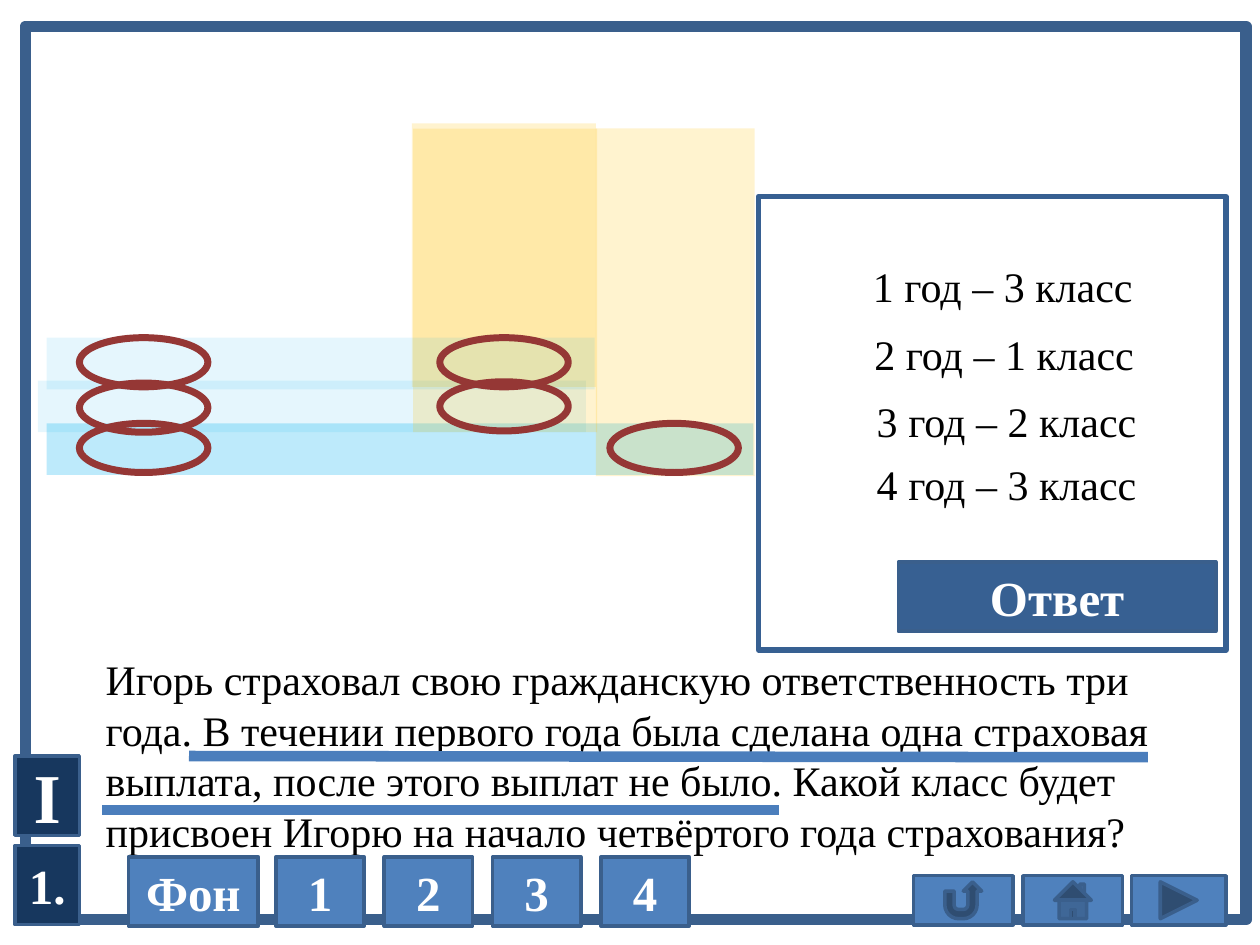
from lxml.etree import SubElement
from pptx import Presentation
from pptx.dml.color import RGBColor
from pptx.enum.shapes import MSO_CONNECTOR, MSO_SHAPE
from pptx.enum.text import MSO_ANCHOR, MSO_AUTO_SIZE, PP_ALIGN
from pptx.oxml.ns import qn
from pptx.util import Inches, Pt

COLORS = {
    "white": "FFFFFF", "black": "000000", "border": "3A5F8C", "navy": "17375E",
    "button": "4F81BD", "answer": "376092", "underline": "4B7EBC",
    "ring": "953735", "row": "00B0F0", "column": "FFC000",
}
FONT = "Times New Roman"

deck = Presentation()
deck.slide_width, deck.slide_height = Inches(10), Inches(7.5)
page = deck.slides.add_slide(deck.slide_layouts[6])


def add_box(kind, place, fill=None, line=None, width=2, opacity=100):
    """Add a preset shape with a plain fill and outline."""
    box = page.shapes.add_shape(kind, *[Inches(value) for value in place])
    box.shadow.inherit = False
    if fill:
        box.fill.solid()
        box.fill.fore_color.rgb = RGBColor.from_string(COLORS[fill])
        if opacity < 100:
            color = box.fill._xPr.find(qn("a:solidFill"))[0]
            SubElement(color, qn("a:alpha"), val=str(opacity * 1000))
    else:
        box.fill.background()
    if line:
        box.line.color.rgb = RGBColor.from_string(COLORS[line])
        box.line.width = Pt(width)
    else:
        box.line.fill.background()
    return box


def write(box, text, size=24, color="black", bold=False, align=PP_ALIGN.LEFT):
    """Put one paragraph of text into a box."""
    para = box.text_frame.paragraphs[0]
    para.text = text
    para.alignment = align
    para.font.name = FONT
    para.font.size = Pt(size)
    para.font.bold = bold
    para.font.color.rgb = RGBColor.from_string(COLORS[color])


# Page frame
add_box(MSO_SHAPE.RECTANGLE, (0.2, 0.21, 9.69, 7.09), "white", "border", 6.5)
add_box(MSO_SHAPE.RECTANGLE, (0.28, 0.29, 9.53, 6.9), "white")

# Translucent bands marking table rows and columns
bands = [
    ((0.37, 3.36, 5.61, 0.41), "row", 26),
    ((0.3, 3.02, 4.35, 0.41), "row", 10),
    ((3.27, 0.98, 1.46, 2.09), "column", 19),
    ((3.28, 1.02, 1.46, 2.41), "column", 19),
    ((0.37, 2.68, 4.35, 0.41), "row", 10),
    ((4.73, 1.02, 1.26, 2.76), "column", 19),
]
for place, color, opacity in bands:
    add_box(MSO_SHAPE.RECTANGLE, place, color, opacity=opacity)

# Rings around the chosen cells
for left, top in [(4.84, 3.36), (0.63, 2.68), (3.49, 2.68),
                  (0.63, 3.04), (3.49, 3.03), (0.63, 3.36)]:
    add_box(MSO_SHAPE.OVAL, (left, top, 1.02, 0.39), line="ring", width=4)

# Problem text
problem = add_box(MSO_SHAPE.RECTANGLE, (0.74, 5.14, 8.99, 1.72), "white")
problem.text_frame.word_wrap = True
problem.text_frame.vertical_anchor = MSO_ANCHOR.TOP
write(problem, "Игорь страховал свою гражданскую ответственность три года. "
      "В течении первого года была сделана одна страховая выплата, "
      "после этого выплат не было. Какой класс будет присвоен Игорю "
      "на начало четвёртого года страхования?")

# Underlines beneath the key sentence
for start_x, start_y, end_x, end_y in [(1.5, 6, 9.11, 6.01), (0.81, 6.43, 6.18, 6.43)]:
    underline = page.shapes.add_connector(
        MSO_CONNECTOR.STRAIGHT, Inches(start_x), Inches(start_y), Inches(end_x), Inches(end_y))
    underline.line.color.rgb = RGBColor.from_string(COLORS["underline"])
    underline.line.width = Pt(6)
    SubElement(underline._element.spPr, qn("a:effectLst"))

# Answer panel
add_box(MSO_SHAPE.RECTANGLE, (6.02, 1.56, 3.71, 3.6), "white", "answer", 3)
answers = [(6.83, 2.02, 3), (6.84, 2.56, 1), (6.86, 3.09, 2), (6.86, 3.59, 3)]
for year, (left, top, grade) in enumerate(answers, 1):
    answer = page.shapes.add_textbox(Inches(left), Inches(top), Inches(2.28), Inches(0.5))
    answer.text_frame.word_wrap = False
    answer.text_frame.auto_size = MSO_AUTO_SIZE.SHAPE_TO_FIT_TEXT
    write(answer, f"{year} год – {grade} класс")

# Labels and buttons with text
blank_button = MSO_SHAPE.ACTION_BUTTON_CUSTOM
buttons = [
    (MSO_SHAPE.RECTANGLE, (0.12, 6, 0.51, 0.63), "navy", "I", 40),
    (MSO_SHAPE.RECTANGLE, (0.12, 6.71, 0.51, 0.63), "navy", "1.", 28),
    (MSO_SHAPE.RECTANGLE, (7.13, 4.46, 2.52, 0.55), "answer", "Ответ", 28),
    (blank_button, (1.02, 6.8, 1.03, 0.55), "button", "Фон", 28),
]
for index in range(4):
    place = (2.19 + 0.86 * index, 6.8, 0.7, 0.55)
    buttons.append((blank_button, place, "button", str(index + 1), 28))
for kind, place, fill, label, size in buttons:
    button = add_box(kind, place, fill, "border")
    button.text_frame.vertical_anchor = MSO_ANCHOR.MIDDLE
    write(button, label, size, "white", True, PP_ALIGN.CENTER)

# Navigation buttons
for kind, left, width in [(MSO_SHAPE.ACTION_BUTTON_RETURN, 7.25, 0.79),
                          (MSO_SHAPE.ACTION_BUTTON_HOME, 8.12, 0.79),
                          (MSO_SHAPE.ACTION_BUTTON_FORWARD_OR_NEXT, 8.98, 0.75)]:
    add_box(kind, (left, 6.95, width, 0.39), "button", "border")

deck.save("out.pptx")
